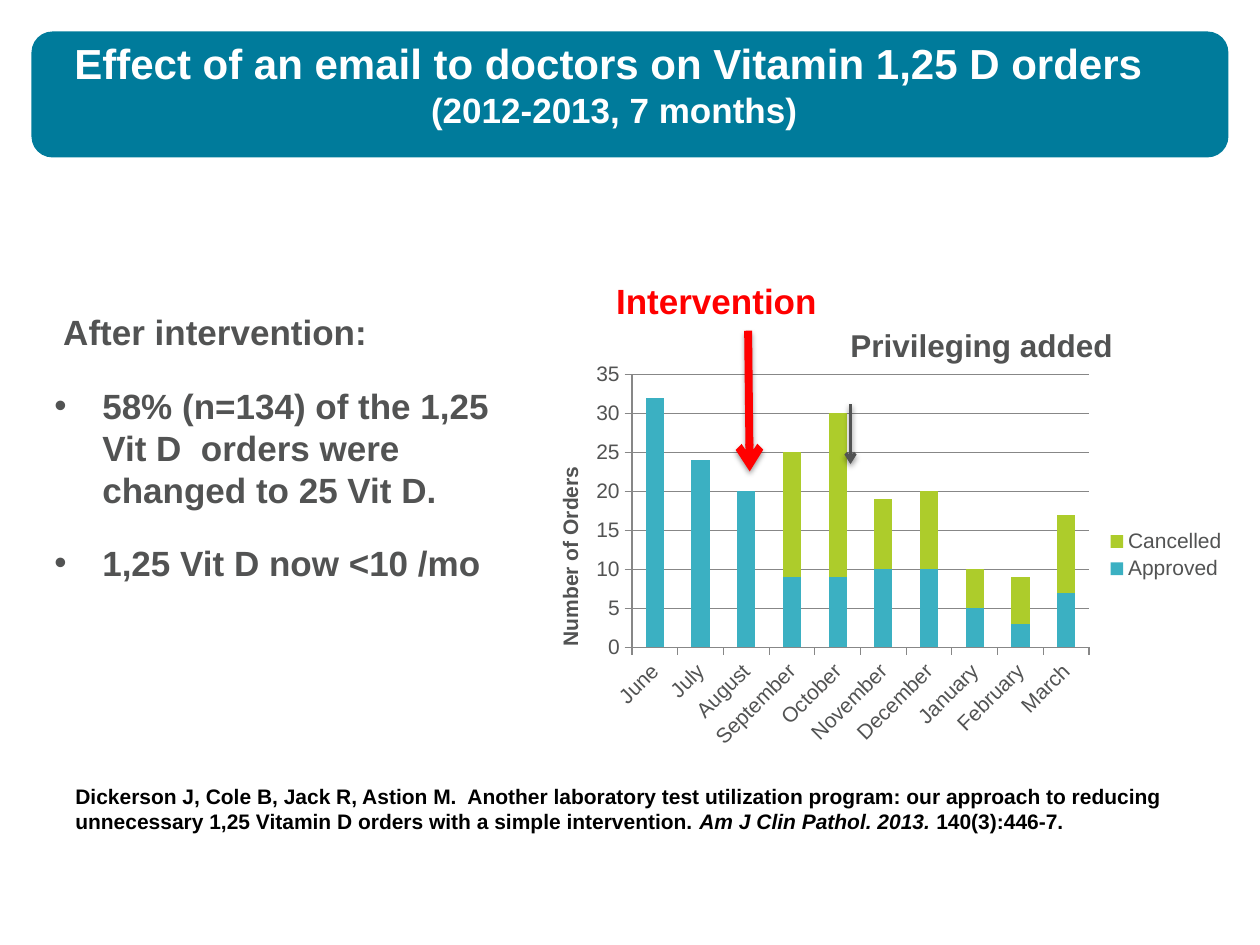
import lxml.etree
import pptx
import pptx.chart.data
import pptx.dml.color
import pptx.enum.chart
import pptx.enum.shapes
import pptx.enum.text
import pptx.oxml
import pptx.oxml.ns
import pptx.util

WIDTH, HEIGHT = pptx.util.Inches(10), pptx.util.Inches(7.5)
COLUMNS, ROWS = 120, 90
FONT = "Arial"
COLORS = {"banner": "007B9B", "text": "525353", "alert": "FF0000", "white": "FFFFFF",
          "black": "000000", "approved": "3BB0C2", "cancelled": "ADCC2B", "rule": "878787"}
MONTHS = ["June", "July", "August", "September", "October",
          "November", "December", "January", "February", "March"]
ORDERS = {"Approved": [32, 24, 20, 9, 9, 10, 10, 5, 3, 7],
          "Cancelled": [0, 0, 0, 16, 21, 9, 10, 5, 6, 10]}


def color(name):
    """Return the named colour."""
    return pptx.dml.color.RGBColor.from_string(COLORS[name])


def grid(column, row):
    """Turn a grid position or size into slide lengths."""
    return int(WIDTH * column / COLUMNS), int(HEIGHT * row / ROWS)


def add_xml(parent, tag, **attributes):
    """Append an element such as a:ln and return it."""
    return lxml.etree.SubElement(parent, pptx.oxml.ns.qn(tag), attributes)


def style_font(font, size, ink, bold=False, italic=False):
    """Format a font."""
    font.name, font.size = FONT, pptx.util.Pt(size)
    font.bold, font.italic = bold, italic
    font.color.rgb = color(ink)


def add_box(page, column, row, columns, rows, wrap=True):
    """Add an empty text box and return its text frame."""
    box = page.shapes.add_textbox(*grid(column, row), *grid(columns, rows))
    box.text_frame.word_wrap = wrap
    box.text_frame.vertical_anchor = pptx.enum.text.MSO_ANCHOR.TOP
    return box.text_frame


def add_span(para, text, size=20, ink="text", bold=True, italic=False):
    """Add a formatted run of text."""
    span = para.add_run()
    span.text = text
    style_font(span.font, size, ink, bold, italic)


def indent(para, left, hanging=0, bullet=None):
    """Set the indents of a paragraph and its bullet."""
    properties = para._p.get_or_add_pPr()
    properties.set("marL", str(pptx.util.Inches(left)))
    properties.set("indent", str(-pptx.util.Inches(hanging)))
    if bullet:
        add_xml(properties, "a:buFont", typeface=FONT)
        add_xml(properties, "a:buChar", char=bullet)


def add_arrow(page, start, end, ink, width):
    """Add a straight arrow with a soft shadow."""
    arrow = page.shapes.add_connector(
        pptx.enum.shapes.MSO_CONNECTOR.STRAIGHT, *grid(*start), *grid(*end))
    arrow.line.color.rgb = color(ink)
    arrow.line.width = pptx.util.Pt(width)
    add_xml(arrow.line._get_or_add_ln(), "a:tailEnd", type="arrow")
    effects = add_xml(arrow._element.spPr, "a:effectLst")
    shadow = add_xml(effects, "a:outerShdw", blurRad=str(pptx.util.Pt(3.1)),
                     dist=str(pptx.util.Pt(1.6)), dir="5400000", rotWithShape="0")
    add_xml(add_xml(shadow, "a:srgbClr", val=COLORS["black"]), "a:alpha", val="38000")


def place(node, index, inner=False, **shares):
    """Fix a chart part at shares of the chart's size."""
    for old in node.findall(pptx.oxml.ns.qn("c:layout")):
        node.remove(old)
    layout = lxml.etree.Element(pptx.oxml.ns.qn("c:layout"))
    node.insert(index, layout)
    manual = add_xml(layout, "c:manualLayout")
    if inner:
        add_xml(manual, "c:layoutTarget", val="inner")
    for mode in ("xMode", "yMode"):
        add_xml(manual, f"c:{mode}", val="edge")
    for name, share in shares.items():
        add_xml(manual, f"c:{name}", val=str(share))


def style_axis(axis):
    """Format the labels, line and ticks of an axis."""
    style_font(axis.tick_labels.font, 12, "text")
    axis.format.line.color.rgb = color("rule")
    axis.major_tick_mark = pptx.enum.chart.XL_TICK_MARK.OUTSIDE
    axis.minor_tick_mark = pptx.enum.chart.XL_TICK_MARK.NONE


def add_orders_chart(page):
    """Add the stacked columns of monthly orders."""
    data = pptx.chart.data.CategoryChartData()
    data.categories = MONTHS
    for name, values in ORDERS.items():
        data.add_series(name, values)
    chart = page.shapes.add_chart(pptx.enum.chart.XL_CHART_TYPE.COLUMN_STACKED,
                                  *grid(50, 33.75), *grid(68, 38.25), data).chart
    style_font(chart.font, 10, "text")
    chart.has_title = False
    chart.has_legend = True
    chart.legend.position = pptx.enum.chart.XL_LEGEND_POSITION.RIGHT
    chart.legend.include_in_layout = False
    style_font(chart.legend.font, 12, "text")

    plot = chart.plots[0]
    plot.gap_width, plot.overlap, plot.vary_by_categories = 150, 100, False
    for series in plot.series:
        series.format.fill.solid()
        series.format.fill.fore_color.rgb = color(series.name.lower())

    months, counts = chart.category_axis, chart.value_axis
    style_axis(months)
    style_axis(counts)
    counts.minimum_scale, counts.maximum_scale, counts.major_unit = 0, 35, 5
    counts.has_major_gridlines = True
    counts.major_gridlines.format.line.color.rgb = color("rule")
    add_span(counts.axis_title.text_frame.paragraphs[0], "Number of Orders", size=12)

    title = counts._element.find(pptx.oxml.ns.qn("c:title"))
    labels = months._element.find(pptx.oxml.ns.qn("c:txPr"))
    for node, turn in ((title, "-5400000"), (labels, "-2700000")):
        body = next(node.iter(pptx.oxml.ns.qn("a:bodyPr")))
        body.set("rot", turn)
        body.set("vert", "horz")
    place(title, 1, x=0.04, y=0.27)
    area = next(chart.element.iter(pptx.oxml.ns.qn("c:plotArea")))
    place(area, 0, inner=True, x=0.15, y=0.05, w=0.64, h=0.68)


def add_banner(page):
    """Add the rounded banner and the title on it."""
    banner = page.shapes.add_shape(pptx.enum.shapes.MSO_SHAPE.ROUNDED_RECTANGLE,
                                   *grid(3, 3), *grid(114, 12))
    banner.shadow.inherit = False
    banner.fill.solid()
    banner.fill.fore_color.rgb = color("banner")
    banner.line.fill.background()
    para = add_box(page, 3, 3, 111, 16).paragraphs[0]
    para.alignment = pptx.enum.text.PP_ALIGN.CENTER
    add_span(para, "Effect of an email to doctors on Vitamin 1,25 D orders ", 24, "white")
    para.add_line_break()
    add_span(para, "(2012-2013, 7 months)", 20, "white")


def add_findings(page):
    """Add the heading and bullets on the left."""
    frame = add_box(page, 4, 29, 44, 58)
    heading = frame.paragraphs[0]
    indent(heading, 0.07)
    add_span(heading, "After intervention:")
    for text in ("58% (n=134) of the 1,25 Vit D  orders were changed to 25 Vit D.",
                 "1,25 Vit D now <10 /mo"):
        para = frame.add_paragraph()
        para.space_before = pptx.util.Pt(18)
        indent(para, 0.38, 0.38, "•")
        add_span(para, text)


def add_citation(page):
    """Add the reference at the bottom."""
    para = add_box(page, 6, 74, 108, 8.5).paragraphs[0]
    add_span(para, "Dickerson J, Cole B, Jack R, Astion M.  Another laboratory test utilization "
             "program: our approach to reducing unnecessary 1,25 Vitamin D orders with a "
             "simple intervention. ", 12, "black")
    add_span(para, "Am J Clin Pathol. 2013. ", 12, "black", italic=True)
    add_span(para, "140(3):446-7.", 12, "black")


def main():
    """Build the slide and save it."""
    deck = pptx.Presentation()
    deck.slide_width, deck.slide_height = WIDTH, HEIGHT
    page = deck.slides.add_slide(deck.slide_layouts[6])
    add_banner(page)
    add_orders_chart(page)
    add_arrow(page, (71.25, 31.5), (71.4, 44.9), "alert", 4.5)
    add_span(add_box(page, 57.5, 26, 23, 5.9, wrap=False).paragraphs[0],
             "Intervention", 20, "alert")
    add_arrow(page, (81, 38.5), (81, 44.2), "text", 2)
    add_span(add_box(page, 79.8, 30.5, 29.4, 5.4, wrap=False).paragraphs[0],
             "Privileging added", 18)
    add_findings(page)
    add_citation(page)
    deck.save("out.pptx")


if __name__ == "__main__":
    main()
